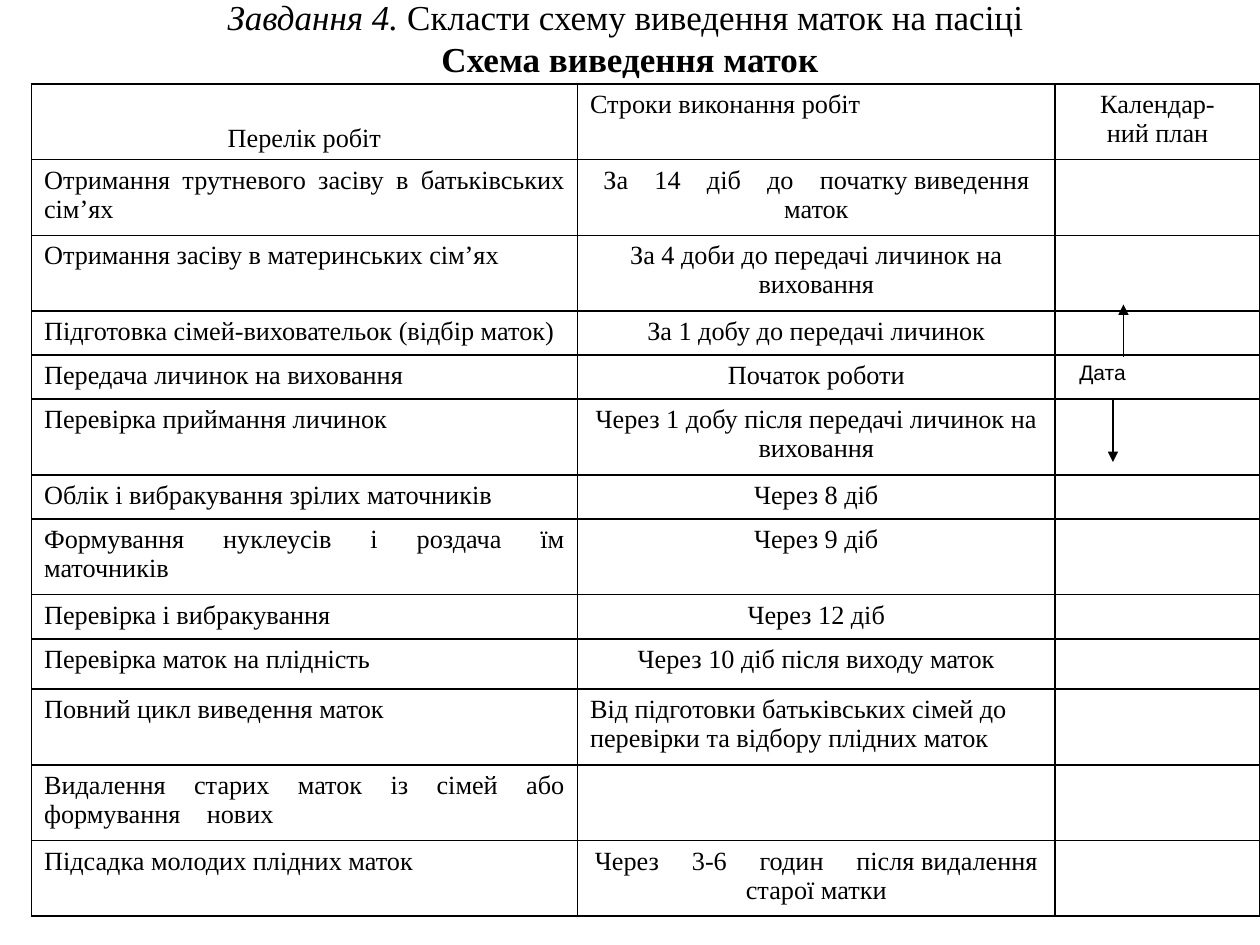
from itertools import groupby

from lxml import etree
from pptx import Presentation
from pptx.dml.color import RGBColor
from pptx.enum.shapes import MSO_CONNECTOR
from pptx.enum.text import MSO_ANCHOR, PP_ALIGN
from pptx.oxml.ns import qn
from pptx.util import Inches, Pt

LEFT, CENTER, JUSTIFY = PP_ALIGN.LEFT, PP_ALIGN.CENTER, PP_ALIGN.JUSTIFY
TOP, MIDDLE, BOTTOM = MSO_ANCHOR.TOP, MSO_ANCHOR.MIDDLE, MSO_ANCHOR.BOTTOM
STRAIGHT = MSO_CONNECTOR.STRAIGHT

COLORS = {"ink": "000000"}
SERIF, SANS = "Times New Roman", "Arial"
UNIT = 1 / 12  # the slide is a grid of 120 columns by 90 rows
WIDE_GAPS = {"~": 1125, "≈": 1500}  # extra spacing of a wide word gap, 1/100 pt

COLUMNS = [52, 45.5, 19.5]
TWO_LINES, ONE_LINE, LOOSE_LINE = 7.2, 4.2, 4.8

# row height, alignment and text of the work, alignment and text of the term
WORKS = [
    (TWO_LINES, JUSTIFY, "Отримання трутневого засіву в батьківських сім’ях",
     CENTER, "За~14~діб~до~початку виведення маток"),
    (TWO_LINES, LEFT, "Отримання засіву в материнських сім’ях",
     CENTER, "За 4 доби до передачі личинок на виховання"),
    (ONE_LINE, LEFT, "Підготовка сімей-виховательок (відбір маток)",
     CENTER, "За 1 добу до передачі личинок"),
    (ONE_LINE, LEFT, "Передача личинок на виховання", CENTER, "Початок роботи"),
    (TWO_LINES, LEFT, "Перевірка приймання личинок",
     CENTER, "Через 1 добу після передачі личинок на виховання"),
    (ONE_LINE, JUSTIFY, "Облік і вибракування зрілих маточників", CENTER, "Через 8 діб"),
    (TWO_LINES, JUSTIFY, "Формування нуклеусів і роздача їм маточників",
     CENTER, "Через 9 діб"),
    (ONE_LINE, JUSTIFY, "Перевірка і вибракування", CENTER, "Через 12 діб"),
    (LOOSE_LINE, LEFT, "Перевірка маток на плідність",
     CENTER, "Через 10 діб після виходу маток"),
    (TWO_LINES, LEFT, "Повний цикл виведення маток",
     LEFT, "Від підготовки батьківських сімей до перевірки та відбору плідних маток"),
    (TWO_LINES, JUSTIFY, "Видалення старих маток із сімей або формування~нових", LEFT, ""),
    (TWO_LINES, LEFT, "Підсадка молодих плідних маток",
     CENTER, "Через≈3-6≈годин≈після видалення старої матки"),
]
DATE_ROW = 4


def grid(n):
    return Inches(n * UNIT)


class SlideBuilder:
    def __init__(self, slide):
        self.s = slide

    def style(self, p, size, align=LEFT, font=SERIF):
        p.alignment = align
        p.font.size, p.font.name = Pt(size), font
        p.font.color.rgb = RGBColor.from_string(COLORS["ink"])

    def title(self, x, y, w, h, lines):
        """Each line is a list of (text, bold, italic) runs."""
        tf = self.s.shapes.add_textbox(*map(grid, (x, y, w, h))).text_frame
        tf.word_wrap, tf.vertical_anchor = True, MIDDLE
        for i, line in enumerate(lines):
            p = tf.add_paragraph() if i else tf.paragraphs[0]
            self.style(p, 20, CENTER)
            for text, bold, italic in line:
                r = p.add_run()
                r.text, r.font.bold, r.font.italic = text, bold, italic

    def table(self, x, y, columns, rows):
        frame = self.s.shapes.add_table(len(rows), len(columns), grid(x), grid(y),
                                        grid(sum(columns)), grid(sum(rows)))
        tbl = frame.table
        tbl.first_row = tbl.horz_banding = False
        for column, width in zip(tbl.columns, columns):
            column.width = grid(width)
        for row, height in zip(tbl.rows, rows):
            row.height = grid(height)
            for cell in row.cells:
                self.borders(cell)
                cell.fill.background()
        return tbl

    def borders(self, cell):
        tcPr = cell._tc.get_or_add_tcPr()
        for side in ("lnL", "lnR", "lnT", "lnB"):
            ln = etree.SubElement(tcPr, qn(f"a:{side}"), w=str(Pt(1)))
            fill = etree.SubElement(ln, qn("a:solidFill"))
            etree.SubElement(fill, qn("a:srgbClr"), val=COLORS["ink"])

    def cell(self, cell, text, align=LEFT, anchor=TOP, size=15, font=SERIF):
        cell.vertical_anchor = anchor
        tf = cell.text_frame
        for i, line in enumerate(text.split("\n")):
            p = tf.add_paragraph() if i else tf.paragraphs[0]
            self.style(p, size, align, font)
            for gap, chars in groupby(line, WIDE_GAPS.get):
                r = p.add_run()
                r.text = " " if gap else "".join(chars)
                if gap:
                    r.font._element.set("spc", str(gap))

    def arrow(self, x, y1, y2):
        c = self.s.shapes.add_connector(STRAIGHT, *map(grid, (x, y1, x, y2)))
        c.line.width = Pt(0.75)
        c.line.color.rgb = RGBColor.from_string(COLORS["ink"])
        etree.SubElement(c.line._get_or_add_ln(), qn("a:tailEnd"), type="triangle")
        etree.SubElement(c._element.spPr, qn("a:effectLst"))


def main():
    prs = Presentation()
    prs.slide_width, prs.slide_height = grid(120), grid(90)
    b = SlideBuilder(prs.slides.add_slide(prs.slide_layouts[6]))

    b.title(3, -1, 114, 9.2, [
        [("Завдання 4.", False, True), (" Скласти схему виведення маток на пасіці ", False, False)],
        [("Схема виведення маток", True, False)],
    ])

    tbl = b.table(3, 8, COLUMNS, [TWO_LINES] + [work[0] for work in WORKS])
    b.cell(tbl.cell(0, 0), "Перелік робіт", CENTER, BOTTOM)
    b.cell(tbl.cell(0, 1), "Строки виконання робіт")
    b.cell(tbl.cell(0, 2), "Календар-\nний план", CENTER)
    for i, (_, work_align, work, term_align, term) in enumerate(WORKS, start=1):
        b.cell(tbl.cell(i, 0), work, work_align)
        b.cell(tbl.cell(i, 1), term, term_align)
        if i == DATE_ROW:
            date = tbl.cell(i, 2)
            date.margin_left = grid(2.3)
            b.cell(date, "Дата", size=12, font=SANS)
        else:
            b.cell(tbl.cell(i, 2), "")

    b.arrow(107, 34, 29)
    b.arrow(106, 38, 44)
    prs.save("out.pptx")


if __name__ == "__main__":
    main()
